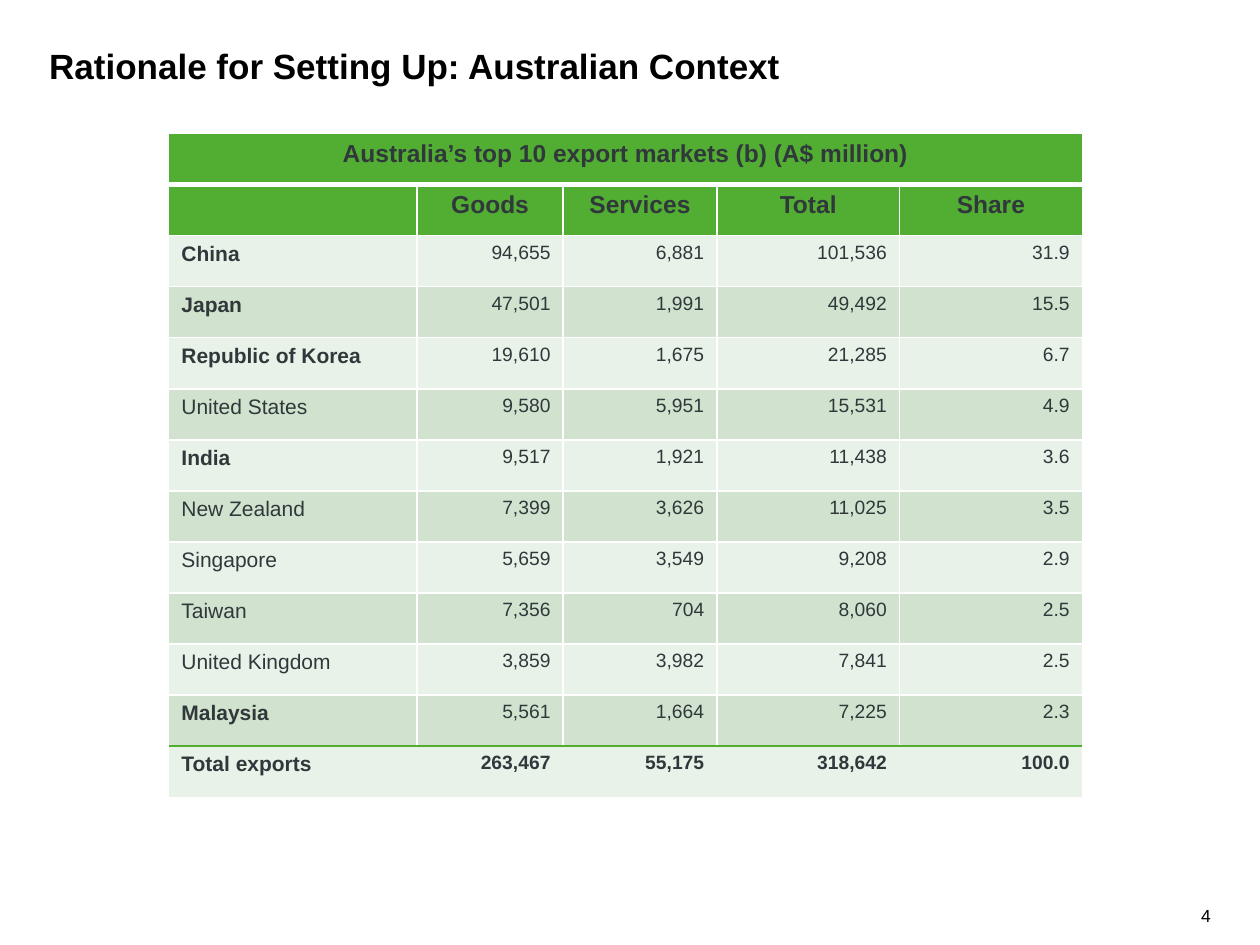
"""Build a slide with a table of Australia's top ten export markets."""
from lxml import etree
from pptx import Presentation
from pptx.dml.color import RGBColor
from pptx.enum import text
from pptx.oxml import ns
from pptx.util import Inches, Pt

TITLE = "Rationale for Setting Up: Australian Context"
PAGE_NUMBER = "4"
CAPTION = "Australia’s top 10 export markets (b) (A$ million)"
HEADINGS = ["", "Goods", "Services", "Total", "Share"]
MARKETS = [
    ("China", "94,655", "6,881", "101,536", "31.9"),
    ("Japan", "47,501", "1,991", "49,492", "15.5"),
    ("Republic of Korea", "19,610", "1,675", "21,285", "6.7"),
    ("United States", "9,580", "5,951", "15,531", "4.9"),
    ("India", "9,517", "1,921", "11,438", "3.6"),
    ("New Zealand", "7,399", "3,626", "11,025", "3.5"),
    ("Singapore", "5,659", "3,549", "9,208", "2.9"),
    ("Taiwan", "7,356", "704", "8,060", "2.5"),
    ("United Kingdom", "3,859", "3,982", "7,841", "2.5"),
    ("Malaysia", "5,561", "1,664", "7,225", "2.3"),
]
TOTALS = ("Total exports", "263,467", "55,175", "318,642", "100.0")
BOLD_NAMES = {"China", "Japan", "Republic of Korea", "India", "Malaysia", "Total exports"}

FONT = "Arial"
BLACK = RGBColor(0x00, 0x00, 0x00)
WHITE = RGBColor(0xFF, 0xFF, 0xFF)
INK = RGBColor(0x30, 0x38, 0x3B)
GREEN = RGBColor(0x52, 0xAE, 0x32)
BANDS = [RGBColor(0xE9, 0xF2, 0xE8), RGBColor(0xD1, 0xE3, 0xCE)]
LEFT, CENTER, RIGHT = text.PP_ALIGN.LEFT, text.PP_ALIGN.CENTER, text.PP_ALIGN.RIGHT

TABLE_LEFT, TABLE_TOP, TABLE_WIDTH, TABLE_HEIGHT = 1.34, 1.06, 7.25, 5.27
COLUMN_WIDTHS = [1.97, 1.16, 1.22, 1.45, 1.45]
THIN, THICK, RULE, NO_LINE = (WHITE, 1), (WHITE, 3), (GREEN, 1.5), None


def add_span(para, words, size, color, bold=False, align=LEFT):
    para.alignment = align
    span = para.add_run()
    span.text = words
    span.font.name = FONT
    span.font.size = Pt(size)
    span.font.bold = bold
    span.font.color.rgb = color


def add_label(page, area, words, size, bold, align, right_inset=0):
    box = page.shapes.add_textbox(*map(Inches, area))
    frame = box.text_frame
    frame.word_wrap = True
    frame.vertical_anchor = text.MSO_ANCHOR.BOTTOM
    frame.margin_left = frame.margin_top = frame.margin_bottom = 0
    frame.margin_right = Inches(right_inset)
    add_span(frame.paragraphs[0], words, size, BLACK, bold, align)
    return frame.paragraphs[0]


def set_borders(cell, **borders):
    properties = cell._tc.get_or_add_tcPr()
    for side in "LRTB":
        border = borders[side]
        line = etree.SubElement(properties, ns.qn(f"a:ln{side}"))
        if border is NO_LINE:
            etree.SubElement(line, ns.qn("a:noFill"))
            continue
        color, width = border
        line.set("w", str(Pt(width)))
        fill = etree.SubElement(line, ns.qn("a:solidFill"))
        etree.SubElement(fill, ns.qn("a:srgbClr"), val=str(color))


def add_export_table(page):
    rows = [[CAPTION] + [""] * 4, HEADINGS, *MARKETS, TOTALS]
    last_row, last_column = len(rows) - 1, len(HEADINGS) - 1
    area = map(Inches, (TABLE_LEFT, TABLE_TOP, TABLE_WIDTH, TABLE_HEIGHT))
    table = page.shapes.add_table(len(rows), len(HEADINGS), *area).table
    table.first_row = table.horz_banding = False
    for column, width in zip(table.columns, COLUMN_WIDTHS):
        column.width = Inches(width)
    for row in table.rows:
        row.height = Inches(TABLE_HEIGHT / len(rows))
    table.cell(0, 0).merge(table.cell(0, last_column))

    rules = [NO_LINE, THICK] + [THIN] * len(MARKETS) + [RULE, NO_LINE]
    for r, values in enumerate(rows):
        is_header = r < 2
        side = THIN if 0 < r < last_row else NO_LINE
        for c, value in enumerate(values):
            cell = table.cell(r, c)
            set_borders(
                cell,
                L=side if c > 0 else NO_LINE,
                R=side if c < last_column else NO_LINE,
                T=rules[r],
                B=rules[r + 1],
            )
            cell.fill.solid()
            cell.fill.fore_color.rgb = GREEN if is_header else BANDS[r % 2]
            if not value:
                continue
            if is_header:
                size, bold, align = 14, True, CENTER
            elif c == 0:
                size, bold, align = 12, value in BOLD_NAMES, LEFT
            else:
                size, bold, align = 11, r == last_row, RIGHT
            add_span(cell.text_frame.paragraphs[0], value, size, INK, bold, align)


def main():
    deck = Presentation()
    deck.slide_width, deck.slide_height = Inches(10), Inches(7.5)
    page = deck.slides.add_slide(deck.slide_layouts[6])
    heading = add_label(page, (0.39, 0.09, 9.21, 0.6), TITLE, 20, True, LEFT, 0.24)
    heading.line_spacing = Pt(21)
    add_label(page, (9.3, 7.18, 0.31, 0.17), PAGE_NUMBER, 10, False, RIGHT)
    add_export_table(page)
    deck.save("out.pptx")


if __name__ == "__main__":
    main()
